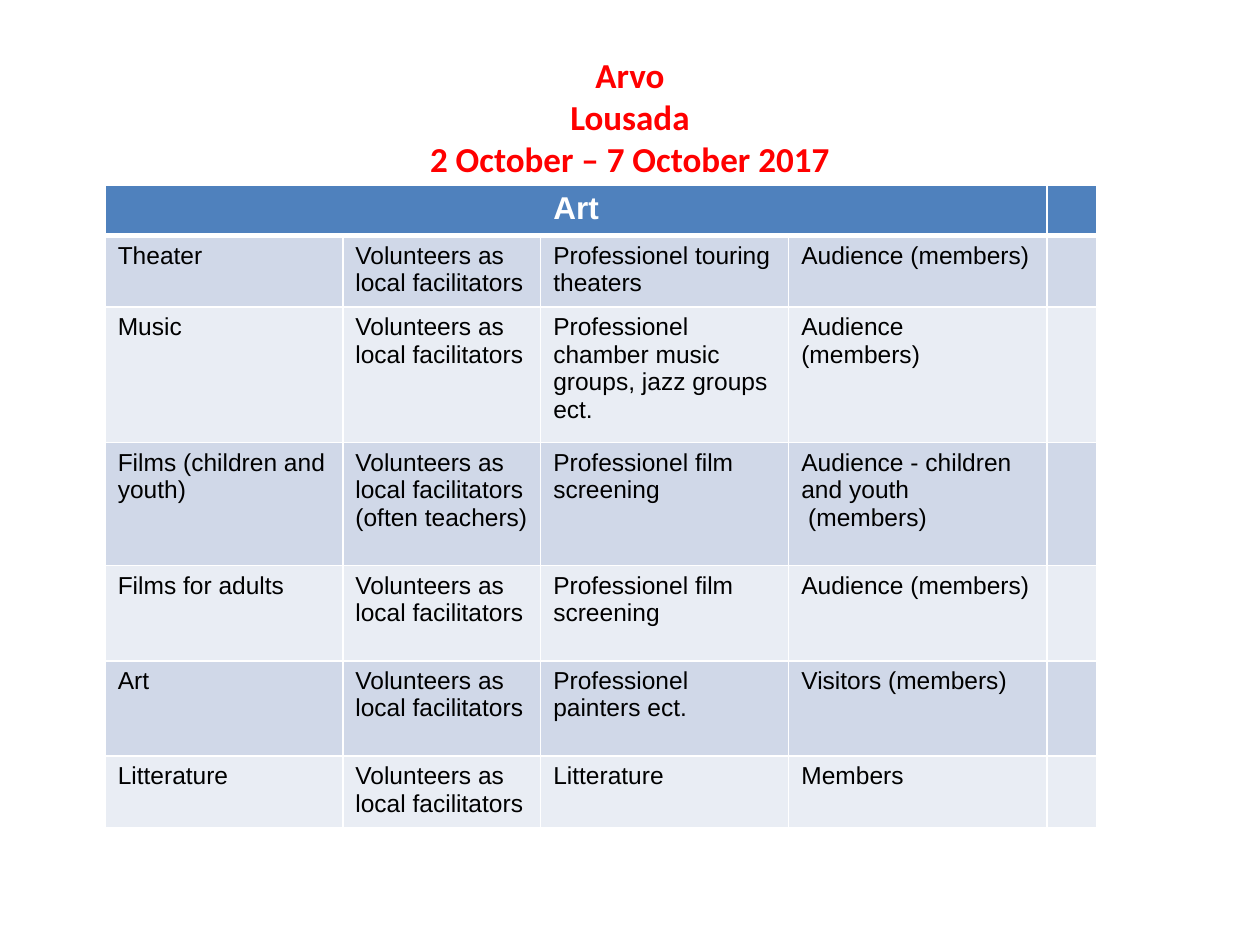
import pptx
import pptx.dml.color
import pptx.enum.text
import pptx.oxml
import pptx.oxml.ns
import pptx.util

Cm = pptx.util.Cm
Pt = pptx.util.Pt
PP_ALIGN = pptx.enum.text.PP_ALIGN
ANCHOR = pptx.enum.text.MSO_ANCHOR

COLORS = {
    "title": "FF0000",
    "header": "4F81BD",
    "odd": "D0D8E8",
    "even": "E9EDF4",
    "light": "FFFFFF",
    "text": "000000",
}
TITLE_LINES = ["Arvo", "Lousada", "2 October – 7 October 2017"]
TITLE_FORMAT = {"name": "Calibri", "size": Pt(20), "bold": True}
HEADER_FORMAT = {"name": "Arial", "size": Pt(18), "bold": True}
BODY_FORMAT = {"name": "Arial", "size": Pt(14), "bold": False}

VOLUNTEERS = "Volunteers as local facilitators"
COLUMN_WIDTHS = [4.79, 3.99, 5, 5.21, 1]
HEADER_HEIGHT = 1.02
ACTIVITIES = [
    (1.37, ["Theater", VOLUNTEERS, "Professionel touring theaters", "Audience (members)"]),
    (2.73, ["Music", VOLUNTEERS, "Professionel chamber music groups, jazz groups ect.",
            "Audience\n(members)"]),
    (2.48, ["Films (children and youth)", VOLUNTEERS + "\n(often teachers)",
            "Professionel film screening", "Audience - children and youth\n (members)"]),
    (1.92, ["Films for adults", VOLUNTEERS, "Professionel film screening", "Audience (members)"]),
    (1.92, ["Art", VOLUNTEERS, "Professionel painters ect.", "Visitors (members)"]),
    (1.35, ["Litterature", VOLUNTEERS, "Litterature", "Members"]),
]


def rgb(name):
    return pptx.dml.color.RGBColor.from_string(COLORS[name])


def format_font(font, values, color):
    for attribute, value in values.items():
        setattr(font, attribute, value)
    font.color.rgb = rgb(color)


def set_borders(cell, widths):
    """Draw light cell borders; widths maps a side (L, R, T, B) to points."""
    properties = cell._tc.get_or_add_tcPr()
    for position, (side, width) in enumerate(widths.items()):
        line = pptx.oxml.parse_xml(
            f'<a:ln{side} {pptx.oxml.ns.nsdecls("a")} w="{Pt(width)}">'
            f'<a:solidFill><a:srgbClr val="{COLORS["light"]}"/></a:solidFill></a:ln{side}>'
        )
        properties.insert(position, line)


def fill_cell(cell, text, fill, values, color, align):
    cell.fill.solid()
    cell.fill.fore_color.rgb = rgb(fill)
    cell.text = text
    for para in cell.text_frame.paragraphs:
        para.alignment = align
        format_font(para.font, values, color)
        for span in para.runs:
            format_font(span.font, values, color)


def add_title(page, left, top, width, height):
    box = page.shapes.add_textbox(left, top, width, height)
    frame = box.text_frame
    frame.word_wrap = True
    frame.vertical_anchor = ANCHOR.MIDDLE
    para = frame.paragraphs[0]
    para.alignment = PP_ALIGN.CENTER
    for index, line in enumerate(TITLE_LINES):
        if index:
            para.add_line_break()
        span = para.add_run()
        span.text = line
        format_font(span.font, TITLE_FORMAT, "title")


def add_activity_table(page, left, top):
    heights = [HEADER_HEIGHT] + [height for height, _ in ACTIVITIES]
    table = page.shapes.add_table(
        len(heights), len(COLUMN_WIDTHS), left, top,
        Cm(sum(COLUMN_WIDTHS)), Cm(sum(heights)),
    ).table
    for column, width in zip(table.columns, COLUMN_WIDTHS):
        column.width = Cm(width)
    for row, height in zip(table.rows, heights):
        row.height = Cm(height)

    last = len(COLUMN_WIDTHS) - 1
    texts = [["Art"] + [""] * last] + [labels + [""] for _, labels in ACTIVITIES]
    for number, labels in enumerate(texts):
        if number == 0:
            style = ("header", HEADER_FORMAT, "light", PP_ALIGN.CENTER)
        else:
            style = ("odd" if number % 2 else "even", BODY_FORMAT, "text", PP_ALIGN.LEFT)
        borders = {"L": 1, "R": 1, "T": 3 if number == 1 else 1, "B": 1 if number else 3}
        for position, label in enumerate(labels):
            cell = table.cell(number, position)
            fill_cell(cell, label, *style)
            set_borders(cell, borders)
    table.cell(0, 0).merge(table.cell(0, last - 1))


def main():
    deck = pptx.Presentation()
    deck.slide_width = Cm(25.4)
    deck.slide_height = Cm(19.05)
    page = deck.slides.add_slide(deck.slide_layouts[6])
    add_title(page, Cm(1.27), Cm(0.76), Cm(22.86), Cm(3.18))
    add_activity_table(page, Cm(2.12), Cm(3.73))
    deck.save("out.pptx")


if __name__ == "__main__":
    main()
